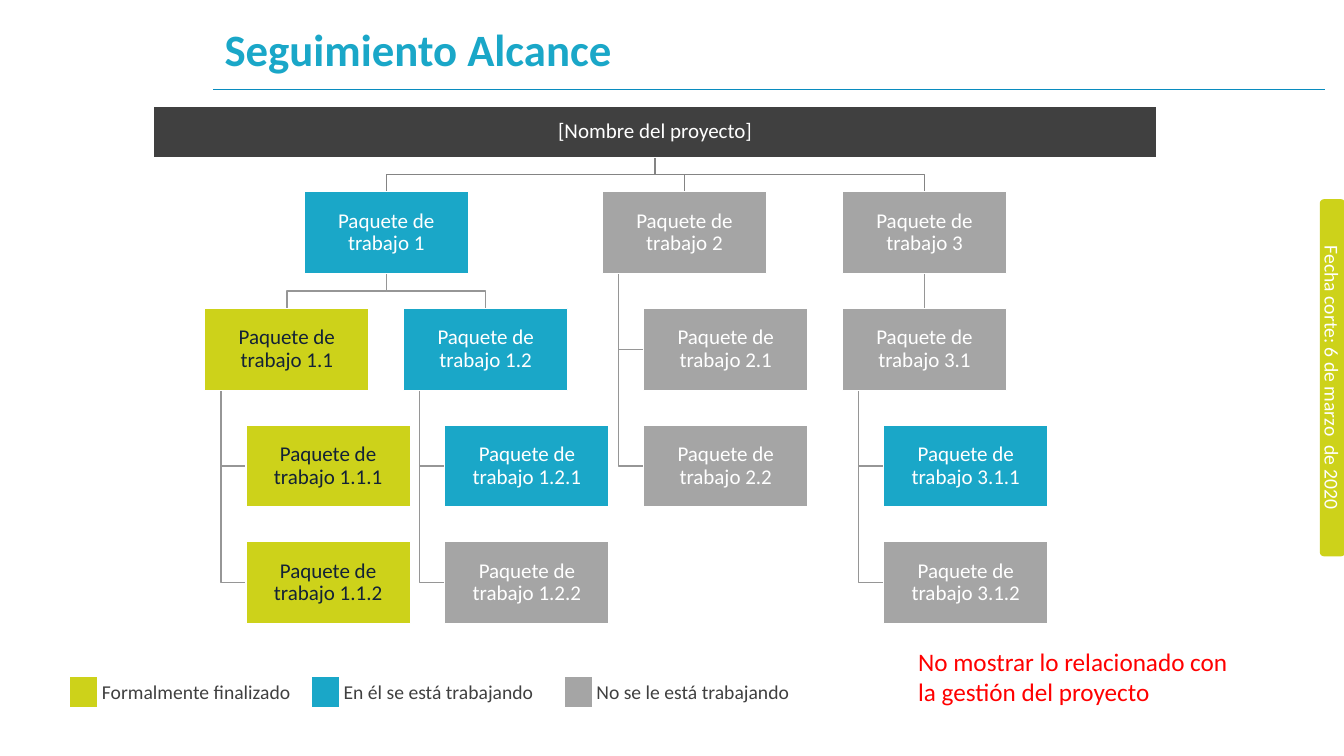
from lxml import etree
from pptx import Presentation
from pptx import util as u
from pptx.dml.color import RGBColor
from pptx.enum import shapes, text
from pptx.oxml import ns

COLORS = {
    "done": "CDD21A", "active": "1AA7C8", "idle": "A5A5A5", "root": "404040",
    "white": "FFFFFF", "ink": "132236", "note": "FF0000", "rule": "098CBF",
    "branch": "848484", "twig": "969696",
}
FONT = "Calibri"
TITLE = "Seguimiento Alcance"
PROJECT = "[Nombre del proyecto]"
NOTE = "No mostrar lo relacionado con la gestión del proyecto"
CUTOFF = "Fecha corte: 6 de marzo  de 2020"

# number: (column, indents, row, status)
PACKAGES = {
    "1": (0.5, 0, 0, "active"),
    "1.1": (0, 0, 1, "done"),
    "1.1.1": (0, 1, 2, "done"),
    "1.1.2": (0, 1, 3, "done"),
    "1.2": (1, 0, 1, "active"),
    "1.2.1": (1, 1, 2, "active"),
    "1.2.2": (1, 1, 3, "idle"),
    "2": (2, 0, 0, "idle"),
    "2.1": (2, 1, 1, "idle"),
    "2.2": (2, 1, 2, "idle"),
    "3": (3, 1, 0, "idle"),
    "3.1": (3, 1, 1, "idle"),
    "3.1.1": (3, 2, 2, "active"),
    "3.1.2": (3, 2, 3, "idle"),
}
FORKS = {"": ["1", "2", "3"], "1": ["1.1", "1.2"]}
HANGS = {
    "1.1": ["1.1.1", "1.1.2"], "1.2": ["1.2.1", "1.2.2"],
    "2": ["2.1", "2.2"], "3.1": ["3.1.1", "3.1.2"],
}
STRAIGHT = ("3", "3.1")
LEGEND = [
    ("done", "Formalmente finalizado", 5.38),
    ("active", "En él se está trabajando", 5.66),
    ("idle", "No se le está trabajando", 6.15),
]

ROOT = (3.86, 2.67, 25.3, 1.3)
BOX_W, BOX_H, GAP = 4.14, 2.07, 0.87
LEFT, TOP, INDENT, STEM = 5.16, 4.83, 1.04, 0.41
SWATCH_W, LEGEND_H = 0.71, 0.79


def color(name):
    return RGBColor.from_string(COLORS[name])


def write(frame, words, size, ink, align=None, spacing=None, bold=False):
    paragraph = frame.paragraphs[0]
    paragraph.alignment = align
    paragraph.line_spacing = spacing
    run = paragraph.add_run()
    run.text = words
    run.font.name = FONT
    run.font.size = u.Pt(size)
    run.font.bold = bold
    run.font.color.rgb = color(ink)


def add_text(slide, area, words, size, ink, **style):
    frame = slide.shapes.add_textbox(*map(u.Cm, area)).text_frame
    frame.word_wrap = True
    frame.vertical_anchor = text.MSO_ANCHOR.MIDDLE
    write(frame, words, size, ink, **style)


def add_block(slide, kind, area, fill, words, size, ink, spacing=None):
    shape = slide.shapes.add_shape(kind, *map(u.Cm, area))
    shape.shadow.inherit = False
    shape.fill.solid()
    shape.fill.fore_color.rgb = color(fill)
    shape.line.fill.background()
    frame = shape.text_frame
    frame.word_wrap = True
    frame.vertical_anchor = text.MSO_ANCHOR.MIDDLE
    frame.margin_left = frame.margin_right = u.Cm(0.03)
    frame.margin_top = frame.margin_bottom = u.Cm(0.03)
    write(frame, words, size, ink, text.PP_ALIGN.CENTER, spacing)
    return shape


def add_box(slide, area, fill, words):
    ink = "ink" if fill == "done" else "white"
    shape = add_block(slide, shapes.MSO_SHAPE.RECTANGLE, area, fill, words, 15, ink, 0.9)
    shape.line.color.rgb = color("white")
    shape.line.width = u.Pt(1)
    return shape


def add_path(slide, points, ink):
    start, *rest = [(u.Cm(x), u.Cm(y)) for x, y in points]
    builder = slide.shapes.build_freeform(*start)
    builder.add_line_segments(rest, close=False)
    shape = builder.convert_to_shape()
    shape.shadow.inherit = False
    shape.fill.background()
    shape.line.color.rgb = color(ink)
    shape.line.width = u.Pt(1)


def add_line(slide, ends, ink, width):
    line = slide.shapes.add_connector(shapes.MSO_CONNECTOR.STRAIGHT, *map(u.Cm, ends))
    line.line.color.rgb = color(ink)
    line.line.width = u.Pt(width)
    etree.SubElement(line.element.spPr, ns.qn("a:effectLst"))
    return line


def add_tree(slide):
    areas = {"": ROOT}
    for number, (column, indents, row, _) in PACKAGES.items():
        x = LEFT + column * (BOX_W + GAP) + indents * INDENT
        areas[number] = (x, TOP + row * (BOX_H + GAP), BOX_W, BOX_H)

    for parent, children in HANGS.items():
        x, y, _, height = areas[parent]
        for child in children:
            child_x, child_y, _, child_height = areas[child]
            middle = child_y + child_height / 2
            add_path(slide, [(x + STEM, y + height), (x + STEM, middle),
                             (child_x, middle)], "twig")
    for parent, children in FORKS.items():
        x, y, width, height = areas[parent]
        center, bottom = x + width / 2, y + height
        for child in children:
            child_x, child_y, child_width, _ = areas[child]
            child_center = child_x + child_width / 2
            bend = (bottom + child_y) / 2
            add_path(slide, [(center, bottom), (center, bend), (child_center, bend),
                             (child_center, child_y)], "twig" if parent else "branch")

    add_box(slide, ROOT, "root", PROJECT)
    boxes = {
        number: add_box(slide, areas[number], package[3], f"Paquete de trabajo {number}")
        for number, package in PACKAGES.items()
    }
    link = add_line(slide, (0, 0, 0, 0), "twig", 1)
    link.begin_connect(boxes[STRAIGHT[0]], 2)
    link.end_connect(boxes[STRAIGHT[1]], 0)


def add_legend(slide):
    total = sum(SWATCH_W + width for _, _, width in LEGEND)
    area = (1.76, 17.05, total, LEGEND_H)
    table = slide.shapes.add_table(1, 2 * len(LEGEND), *map(u.Cm, area)).table
    table.first_row = table.horz_banding = False
    for index, (status, words, width) in enumerate(LEGEND):
        swatch, label = table.cell(0, 2 * index), table.cell(0, 2 * index + 1)
        table.columns[2 * index].width = u.Cm(SWATCH_W)
        table.columns[2 * index + 1].width = u.Cm(width)
        for cell in (swatch, label):
            cell.margin_left = cell.margin_right = u.Cm(0.1)
            cell.margin_top = cell.margin_bottom = 0
            cell.vertical_anchor = text.MSO_ANCHOR.MIDDLE
        swatch.fill.solid()
        swatch.fill.fore_color.rgb = color(status)
        label.fill.background()
        write(label.text_frame, words, 14, "root")


def main():
    presentation = Presentation()
    presentation.slide_width = u.Cm(33.87)
    presentation.slide_height = u.Cm(19.05)
    slide = presentation.slides.add_slide(presentation.slide_layouts[6])
    add_line(slide, (5.38, 2.24, 33.4, 2.24), "rule", 0.5)
    add_text(slide, (5.41, 0.58, 27.97, 1.45), TITLE, 32, "active", spacing=0.9, bold=True)
    add_tree(slide)
    add_legend(slide)
    add_text(slide, (22.89, 16.15, 8.36, 1.8), NOTE, 18, "note")
    tab = add_block(slide, shapes.MSO_SHAPE.ROUNDED_RECTANGLE, (29.08, 9.2, 9, 0.64),
                    "done", CUTOFF, 14, "white")
    tab.adjustments[0] = 0.16
    tab.rotation = 90
    presentation.save("out.pptx")


if __name__ == "__main__":
    main()
